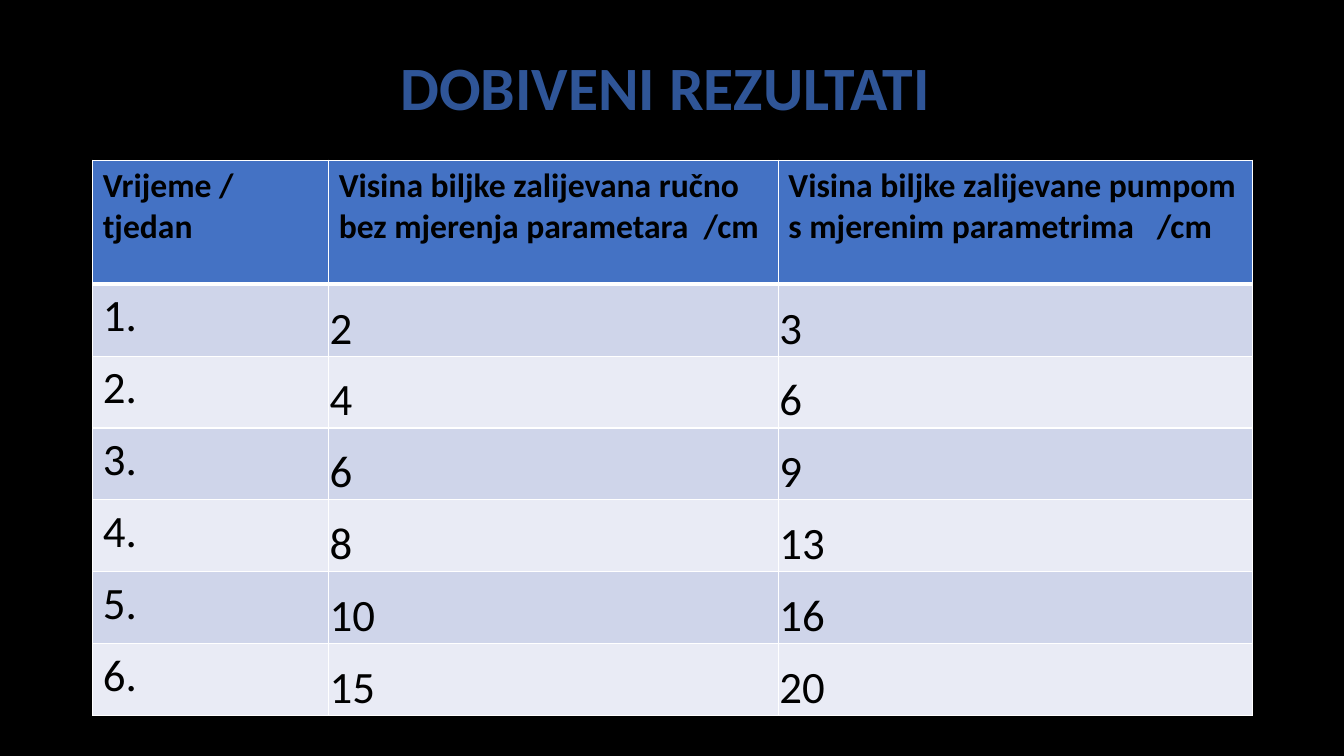
from dataclasses import dataclass

from lxml import etree
from pptx import Presentation
from pptx import util as u
from pptx.dml import color
from pptx.enum import text
from pptx.oxml import ns


@dataclass(frozen=True)
class Theme:
    """Colours, font and type sizes of the slide."""
    font: str = "Calibri"
    background: str = "000000"
    title: str = "2F5597"
    ink: str = "000000"
    border: str = "FFFFFF"
    header: str = "4472C4"
    bands: tuple = ("CFD5EA", "E9EBF5")
    title_size: int = 44
    header_size: int = 24
    body_size: int = 32


THEME = Theme()
HEADINGS = (
    "Vrijeme / tjedan",
    "Visina biljke zalijevana ručno bez mjerenja parametara  /cm",
    "Visina biljke zalijevane pumpom s mjerenim parametrima   /cm",
)
HEIGHTS = ((2, 3), (4, 6), (6, 9), (8, 13), (10, 16), (15, 20))
COLUMN_WIDTHS = (2.34, 4.46, 4.7)
HEADER_HEIGHT = 1.23


def add_run(p, words, size, rgb, bold=False):
    """Append a formatted run to a paragraph."""
    r = p.add_run()
    r.text = words
    r.font.name = THEME.font
    r.font.size = u.Pt(size)
    r.font.bold = bold
    r.font.color.rgb = color.RGBColor.from_string(rgb)


def set_borders(cell, top, bottom):
    """Draw the four cell borders, with top and bottom widths in points."""
    tc_pr = cell._tc.get_or_add_tcPr()
    sides = {"L": 1, "R": 1, "T": top, "B": bottom}
    for i, (side, width) in enumerate(sides.items()):
        line = etree.Element(ns.qn(f"a:ln{side}"), w=str(u.Pt(width)))
        fill = etree.SubElement(line, ns.qn("a:solidFill"))
        etree.SubElement(fill, ns.qn("a:srgbClr"), val=THEME.border)
        tc_pr.insert(i, line)


def add_title(s, left, top, width, height):
    """Place the title placeholder in its box."""
    sp = s.shapes.title
    sp.left, sp.top, sp.width, sp.height = map(u.Inches, (left, top, width, height))
    tf = sp.text_frame
    tf.word_wrap = True
    tf.vertical_anchor = text.MSO_ANCHOR.MIDDLE
    p = tf.paragraphs[0]
    p.alignment = text.PP_ALIGN.CENTER
    p.line_spacing = 0.9
    add_run(p, "DOBIVENI REZULTATI ", THEME.title_size, THEME.title, True)


def fill_cell(cell, words, row, col):
    """Write and format one table cell by its place in the grid."""
    is_header = row == 0
    cell.fill.solid()
    rgb = THEME.header if is_header else THEME.bands[(row - 1) % 2]
    cell.fill.fore_color.rgb = color.RGBColor.from_string(rgb)
    set_borders(cell, top=3 if row == 1 else 1, bottom=3 if is_header else 1)
    if not is_header and col > 0:
        cell.vertical_anchor = text.MSO_ANCHOR.BOTTOM
        cell.margin_left = cell.margin_right = cell.margin_top = u.Inches(0.01)
        cell.margin_bottom = 0
    size = THEME.header_size if is_header else THEME.body_size
    add_run(cell.text_frame.paragraphs[0], words, size, THEME.ink, is_header)


def add_results(s, left, top, width, height):
    """Build the table of weekly plant heights in its box."""
    rows = [HEADINGS]
    rows += [(f"{week}.", *map(str, pair)) for week, pair in enumerate(HEIGHTS, 1)]
    box = map(u.Inches, (left, top, width, height))
    table = s.shapes.add_table(len(rows), len(HEADINGS), *box).table
    for column, share in zip(table.columns, COLUMN_WIDTHS):
        column.width = u.Inches(width * share / sum(COLUMN_WIDTHS))
    body_height = (height - HEADER_HEIGHT) / len(HEIGHTS)
    for i, row in enumerate(rows):
        table.rows[i].height = u.Inches(body_height if i else HEADER_HEIGHT)
        for j, words in enumerate(row):
            fill_cell(table.cell(i, j), words, i, j)


def main():
    """Build and save the results slide."""
    prs = Presentation()
    prs.slide_width, prs.slide_height = u.Inches(13.33), u.Inches(7.5)
    s = prs.slides.add_slide(prs.slide_layouts[5])
    s.background.fill.solid()
    s.background.fill.fore_color.rgb = color.RGBColor.from_string(THEME.background)
    add_title(s, 0.92, 0.4, 11.5, 0.99)
    add_results(s, 0.92, 1.59, 11.5, 5.51)
    prs.save("out.pptx")


if __name__ == "__main__":
    main()
